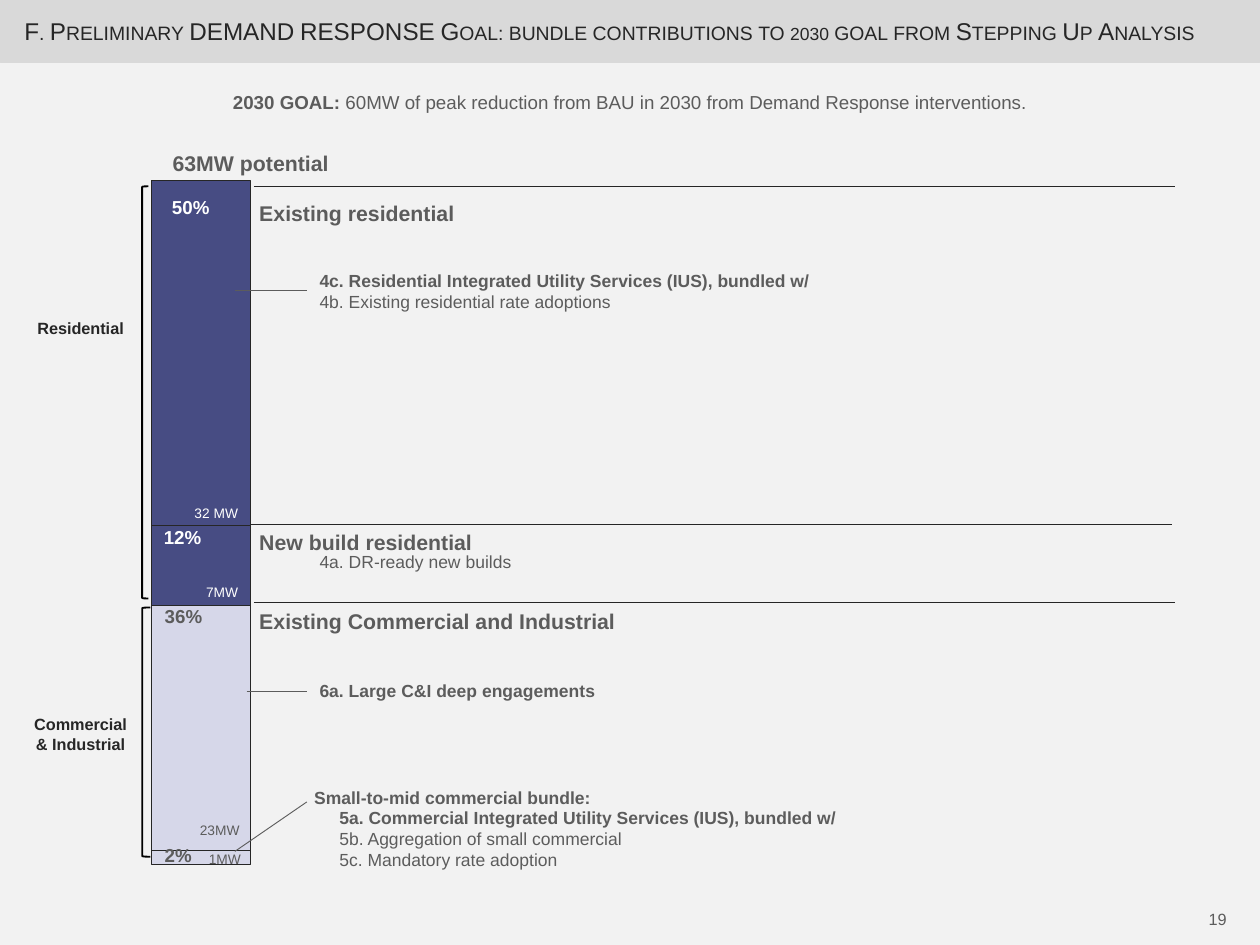
from lxml import etree
from pptx import Presentation
from pptx import util as u
from pptx.chart.data import CategoryChartData
from pptx.dml.color import RGBColor
from pptx.enum import chart as charts, shapes, text
from pptx.oxml.ns import qn

PAPER = RGBColor(0xF2, 0xF2, 0xF2)
BANNER = RGBColor(0xD9, 0xD9, 0xD9)
GREY = RGBColor(0x5C, 0x5C, 0x5C)
INK = RGBColor(0x26, 0x26, 0x26)
BLACK = RGBColor(0, 0, 0)
WHITE = RGBColor(0xFF, 0xFF, 0xFF)
NAVY = RGBColor(0x47, 0x4C, 0x83)
LILAC = RGBColor(0xD6, 0xD7, 0xE9)
LEFT, CENTER, RIGHT = text.PP_ALIGN.LEFT, text.PP_ALIGN.CENTER, text.PP_ALIGN.RIGHT


def inches(*lengths):
    return [u.Inches(length) for length in lengths]


class SlideBuilder:
    """Draws styled elements on the current slide."""

    font = "Arial"

    def __init__(self, page):
        self.page = page
        page.background.fill.solid()
        page.background.fill.fore_color.rgb = PAPER

    def set_margins(self, frame):
        frame.margin_left, frame.margin_top = inches(0.14, 0.07)
        frame.margin_right, frame.margin_bottom = inches(0.14, 0.07)

    def style_font(self, font, size, color, bold=False):
        font.name, font.size, font.bold = self.font, u.Pt(size), bold
        font.color.rgb = color

    def title(self, spans, place):
        box = self.page.shapes.title
        box.left, box.top, box.width, box.height = inches(*place)
        frame = box.text_frame
        self.set_margins(frame)
        frame.word_wrap = True
        frame.auto_size = text.MSO_AUTO_SIZE.NONE
        frame.vertical_anchor = text.MSO_ANCHOR.MIDDLE
        para = frame.paragraphs[0]
        para.alignment = LEFT
        for words, size in spans:
            span = para.add_run()
            span.text = words
            self.style_font(span.font, size, INK)
            span._r.get_or_add_rPr().set("cap", "small")

    def label(self, lines, place, size, color=GREY, bold=False, align=LEFT,
              wrap=True, indent=0):
        """Each line is a list of (words, bold) pairs, or plain words."""
        box = self.page.shapes.add_textbox(*inches(*place))
        frame = box.text_frame
        self.set_margins(frame)
        frame.word_wrap = wrap
        frame.auto_size = text.MSO_AUTO_SIZE.SHAPE_TO_FIT_TEXT
        for number, line in enumerate([lines] if isinstance(lines, str) else lines):
            para = frame.add_paragraph() if number else frame.paragraphs[0]
            para.alignment = align
            if indent:
                para._p.get_or_add_pPr().set("marL", str(u.Inches(indent)))
            self.style_font(para.font, size, color, bold)
            for words, heavy in [(line, bold)] if isinstance(line, str) else line:
                span = para.add_run()
                span.text = words
                self.style_font(span.font, size, color, heavy)

    def banner(self, place):
        bar = self.page.shapes.add_shape(shapes.MSO_SHAPE.RECTANGLE, *inches(*place))
        bar.shadow.inherit = False
        bar.fill.solid()
        bar.fill.fore_color.rgb = bar.line.color.rgb = BANNER
        bar.line.width = u.Pt(0.75)
        self.page.shapes._spTree.insert(2, bar._element)

    def bracket(self, place):
        shape = self.page.shapes.add_shape(
            shapes.MSO_SHAPE.LEFT_BRACKET, *inches(*place))
        shape.shadow.inherit = False
        shape.fill.background()
        shape.line.color.rgb = BLACK
        shape.line.width = u.Pt(1.5)

    def line(self, ends, color):
        line = self.page.shapes.add_connector(
            shapes.MSO_CONNECTOR.STRAIGHT, *inches(*ends))
        line.line.color.rgb = color
        line.line.width = u.Pt(0.75)
        etree.SubElement(line._element.spPr, qn("a:effectLst"))

    def stacked_bar(self, parts, place):
        data = CategoryChartData()
        data.categories = ["1"]
        for number, (value, color) in enumerate(parts, 1):
            data.add_series(f"Series {number}", [value])
        chart = self.page.shapes.add_chart(
            charts.XL_CHART_TYPE.COLUMN_STACKED, *inches(*place), data).chart
        chart.has_legend = chart.has_title = False
        chart.font.name, chart.font.size = "DejaVu Sans", u.Pt(10)
        chart.font.color.rgb = INK
        chart.category_axis.visible = chart.value_axis.visible = False
        chart.value_axis.has_major_gridlines = False
        chart.value_axis.minimum_scale = 0
        chart.value_axis.maximum_scale = sum(value for value, color in parts)
        plot = chart.plots[0]
        plot.gap_width, plot.overlap, plot.vary_by_categories = 150, 100, False
        for series, (value, color) in zip(plot.series, parts):
            series.format.fill.solid()
            series.format.fill.fore_color.rgb = color
            series.format.line.color.rgb = INK
            series.format.line.width = u.Pt(0.75)
        area = chart._chartSpace.chart.plotArea
        for old in area.findall(qn("c:layout")):
            area.remove(old)
        layout = etree.Element(qn("c:layout"))
        manual = etree.SubElement(layout, qn("c:manualLayout"))
        for tag, value in (("layoutTarget", "inner"), ("xMode", "edge"),
                           ("yMode", "edge"), ("x", "0.02"), ("y", "0.18"),
                           ("w", "0.96"), ("h", "0.8")):
            etree.SubElement(manual, qn(f"c:{tag}")).set("val", value)
        area.insert(0, layout)


def main():
    deck = Presentation()
    deck.slide_width, deck.slide_height = inches(14, 10.5)
    slide = SlideBuilder(deck.slides.add_slide(deck.slide_layouts[5]))

    slide.title([("F. Preliminary DEMAND RESPONSE Goal: bundle contributions to ", 19.4),
                 ("2030", 17.5), (" goal from Stepping Up Analysis", 19.4)],
                (0.13, 0, 13.67, 0.69))
    slide.banner((0, 0, 14, 0.69))
    slide.stacked_bar([(4, LILAC), (71, LILAC), (23, NAVY), (100, NAVY)],
                      (0.81, 0.29, 2.85, 9.51))
    slide.label([[("2030 GOAL: ", True),
                  ("60MW of peak reduction from BAU in 2030 from "
                   "Demand Response interventions.", False)]],
                (0, 0.94, 14, 0.66), 15, align=CENTER)
    slide.label("63MW potential", (1.34, 1.6, 2.89, 0.71), 17, bold=True, align=CENTER)

    for share, left, top, width, color in (
            ("50%", 1.77, 2.11, 0.72, WHITE), ("12%", 1.68, 5.77, 0.7, WHITE),
            ("36%", 1.69, 6.65, 0.72, GREY), ("2%", 1.69, 9.3, 0.59, GREY)):
        slide.label(share, (left, top, width, 0.4), 15, color, bold=True, wrap=False)
    for power, left, top, width, color in (
            ("32 MW", 2.02, 5.54, 0.79, WHITE), ("7MW", 2.15, 6.42, 0.66, WHITE),
            ("23MW", 2.08, 9.06, 0.75, GREY), ("1MW", 2.18, 9.38, 0.66, GREY)):
        slide.label(power, (left, top, width, 0.33), 11, color, wrap=False)

    for sector, top, height in (("Residential", 3.47, 0.37),
                                ("Commercial & Industrial", 7.87, 0.59)):
        slide.label(sector, (0.18, top, 1.43, height), 13, INK, bold=True, align=CENTER)
    slide.bracket((1.58, 2.07, 0.07, 4.58))
    slide.bracket((1.58, 6.75, 0.09, 2.77))

    for heading, top in (("Existing residential", 2.16), ("New build residential", 5.81),
                         ("Existing Commercial and Industrial", 6.69)):
        slide.label(heading, (2.74, top, 4.78, 0.42), 17, bold=True)
    for start, end, top in ((2.82, 13.06, 2.07), (2.78, 13.02, 5.83), (2.82, 13.05, 6.69)):
        slide.line((start, top, end, top), INK)
    for start, top, end_top in ((2.61, 3.23, 3.23), (2.74, 7.68, 7.68), (2.61, 9.46, 8.91)):
        slide.line((start, top, 3.41, end_top), GREY)

    slide.label([[("4c. Residential Integrated Utility Services (IUS), bundled w/", True)],
                 "4b. Existing residential rate adoptions"], (3.41, 2.93, 8.38, 0.61), 14)
    slide.label("4a. DR-ready new builds", (3.41, 6.05, 5.68, 0.38), 14)
    slide.label("6a. Large C&I deep engagements", (3.41, 7.49, 8.38, 0.38), 14, bold=True)
    slide.label("Small-to-mid commercial bundle:", (3.35, 8.67, 8.38, 0.38), 14, bold=True)
    slide.label([[("5a. Commercial Integrated Utility Services (IUS), bundled w/", True)],
                 "5b. Aggregation of small commercial", "5c. Mandatory rate adoption"],
                (3.41, 8.9, 8.38, 0.85), 14, indent=0.22)
    slide.label("19", (13.05, 10.03, 0.72, 0.37), 13, align=RIGHT)
    deck.save("out.pptx")


if __name__ == "__main__":
    main()
